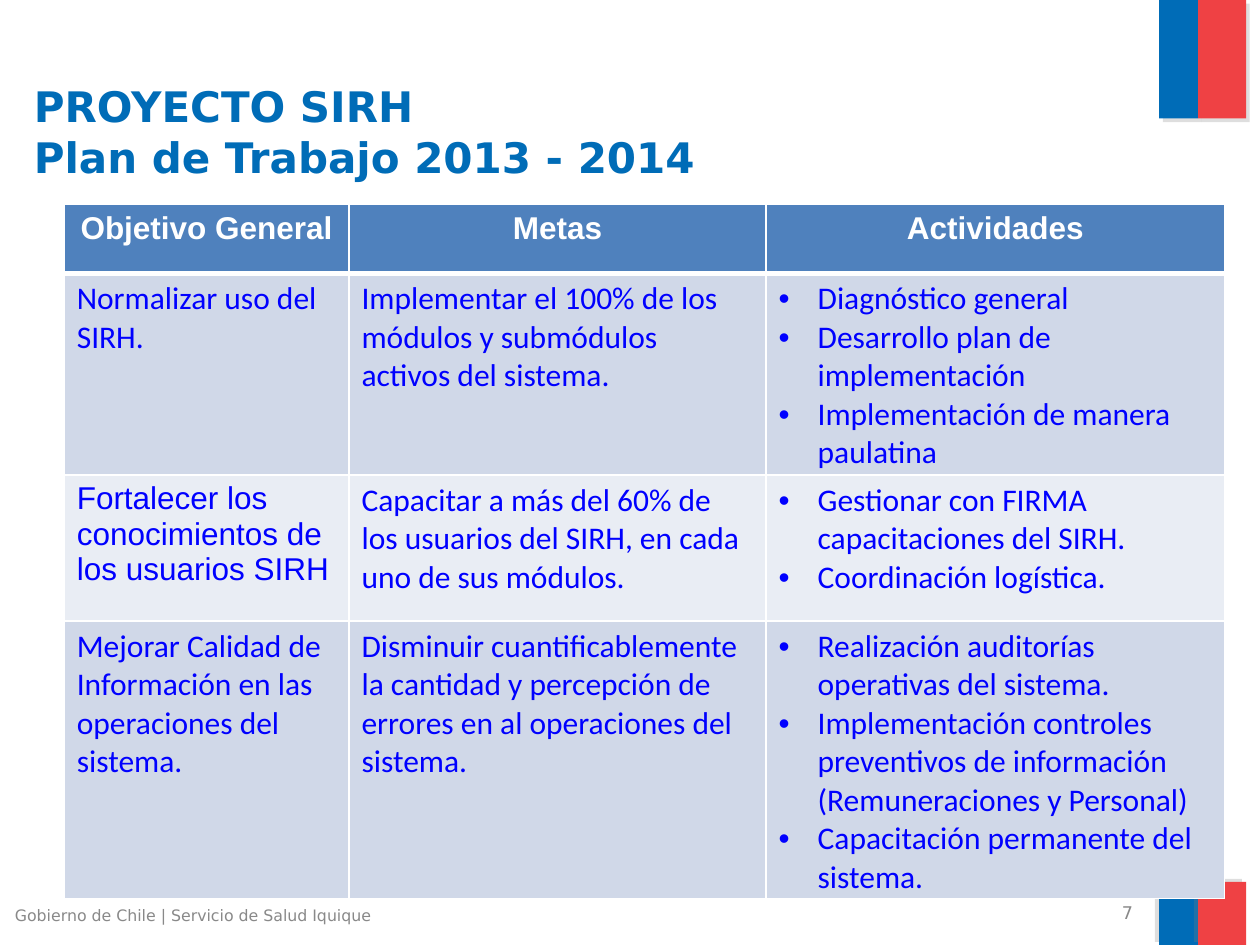
from dataclasses import dataclass

from lxml import etree
from pptx import Presentation
from pptx.dml.color import RGBColor
from pptx.enum.shapes import MSO_SHAPE
from pptx.enum.text import MSO_ANCHOR, PP_ALIGN
from pptx.oxml.ns import qn
from pptx.util import Inches, Pt

RECT = MSO_SHAPE.RECTANGLE
TOP, MIDDLE = MSO_ANCHOR.TOP, MSO_ANCHOR.MIDDLE
LEFT, CENTER, RIGHT = PP_ALIGN.LEFT, PP_ALIGN.CENTER, PP_ALIGN.RIGHT

BLUE, RED, GREY, WHITE = "006CB7", "EF4144", "898989", "FFFFFF"
HEADER_FILL, BODY_BLUE = "4F81BD", "0000FF"
BAND_FILLS = ("D0D8E8", "E9EDF4")
BULLET_INDENT = 0.31


@dataclass
class Bar:
    left: float
    top: float
    width: float
    height: float
    color: str
    shadow_angle: int


@dataclass
class Label:
    left: float
    top: float
    width: float
    height: float
    text: str
    size: float
    color: str
    bold: bool = False
    align: PP_ALIGN = LEFT
    anchor: MSO_ANCHOR = TOP
    margin_top: float = 0.05
    line_pitch: float | None = None


@dataclass
class PlanRow:
    height: float
    objective: str
    goal: str
    activities: list[str]
    objective_font: str = "Calibri"


BARS = [
    Bar(9.2, -0.01, 0.31, 0.95, BLUE, 45),
    Bar(9.51, 0, 0.38, 0.94, RED, 45),
    Bar(9.2, 7, 0.31, 0.5, BLUE, 215),
    Bar(9.51, 7, 0.38, 0.5, RED, 215),
]
LABELS = [
    Label(0.17, 0.17, 8.93, 1.25, "PROYECTO SIRH\vPlan de Trabajo 2013 - 2014", 24, BLUE,
          bold=True, margin_top=0.46, line_pitch=29.2),
    Label(6.76, 7.14, 2.33, 0.21, "7", 10, GREY, align=RIGHT, anchor=MIDDLE),
    Label(0.02, 7.14, 3.17, 0.27, "Gobierno de Chile | Servicio de Salud Iquique", 9, GREY),
]
HEADERS = ["Objetivo General", "Metas", "Actividades"]
HEADER_HEIGHT = 0.55
COL_WIDTHS = [2.26, 3.31, 3.64]
PLAN = [
    PlanRow(1.58, "Normalizar uso del SIRH.",
            "Implementar el 100% de los módulos y submódulos activos del sistema.",
            ["Diagnóstico general", "Desarrollo plan de implementación",
             "Implementación de manera paulatina"]),
    PlanRow(1.16, "Fortalecer los conocimientos de los usuarios SIRH",
            "Capacitar a más del 60% de los usuarios del SIRH, en cada uno de sus módulos.",
            ["Gestionar con FIRMA capacitaciones del SIRH.", "Coordinación logística."],
            objective_font="Arial"),
    PlanRow(1.87, "Mejorar Calidad de Información en las operaciones del sistema.",
            "Disminuir cuantificablemente la cantidad y percepción de errores en al "
            "operaciones del sistema.",
            ["Realización auditorías operativas del sistema.",
             "Implementación controles preventivos de información (Remuneraciones y Personal)",
             "Capacitación permanente del sistema."]),
]


def rgb(color: str) -> RGBColor:
    return RGBColor.from_string(color)


def sub(parent, tag: str, **attrs):
    """Append a child element with the given attributes."""
    return etree.SubElement(parent, qn(tag), {k: str(v) for k, v in attrs.items()})


def format_font(font, color: str, **values) -> None:
    font.color.rgb = rgb(color)
    for name, value in values.items():
        setattr(font, name, value)


def add_bar(slide, bar: Bar) -> None:
    s = slide.shapes.add_shape(RECT, *map(Inches, (bar.left, bar.top, bar.width, bar.height)))
    s.fill.solid()
    s.fill.fore_color.rgb = rgb(bar.color)
    s.line.fill.background()
    s.shadow.inherit = False
    effects = s._element.spPr.find(qn("a:effectLst"))
    shadow = sub(effects, "a:outerShdw", blurRad=0, dist=Pt(3), dir=bar.shadow_angle * 60000,
                 algn="ctr", rotWithShape=0)
    sub(sub(shadow, "a:srgbClr", val="808080"), "a:alpha", val=25000)


def add_label(slide, label: Label) -> None:
    box = (label.left, label.top, label.width, label.height)
    tf = slide.shapes.add_textbox(*map(Inches, box)).text_frame
    tf.word_wrap = True
    tf.vertical_anchor = label.anchor
    tf.margin_top = Inches(label.margin_top)
    tf.text = label.text
    p = tf.paragraphs[0]
    p.alignment = label.align
    if label.line_pitch:
        p.line_spacing = Pt(label.line_pitch)
    for r in p.runs:
        format_font(r.font, label.color, name="DejaVu Sans", size=Pt(label.size),
                    bold=label.bold)


def set_borders(cell, widths: dict[str, float]) -> None:
    """Draw white borders; they must precede the fill in the cell properties."""
    tc_pr = cell._tc.get_or_add_tcPr()
    for side, width in widths.items():
        line = sub(tc_pr, f"a:ln{side}", w=Pt(width))
        sub(sub(line, "a:solidFill"), "a:srgbClr", val=WHITE)


def add_bullet(p) -> None:
    p_pr = p._p.get_or_add_pPr()
    p_pr.set("marL", str(Inches(BULLET_INDENT)))
    p_pr.set("indent", str(-Inches(BULLET_INDENT)))
    sub(p_pr, "a:buFont", typeface="Arial")
    sub(p_pr, "a:buChar", char="•")


def fill_cell(cell, lines: list[str], fill: str, font: str, color: str, bold: bool = False,
              align: PP_ALIGN = LEFT, bullets: bool = False, top: float = 1,
              bottom: float = 1) -> None:
    set_borders(cell, {"L": 1, "R": 1, "T": top, "B": bottom})
    cell.fill.solid()
    cell.fill.fore_color.rgb = rgb(fill)
    tf = cell.text_frame
    tf.text = "\n".join(lines)
    for p in tf.paragraphs:
        p.alignment = align
        if bullets:
            add_bullet(p)
        format_font(p.runs[0].font, color, name=font, size=Pt(18), bold=bold)


def add_plan_table(slide) -> None:
    heights = [HEADER_HEIGHT] + [row.height for row in PLAN]
    box = (0.51, 1.62, sum(COL_WIDTHS), sum(heights))
    table = slide.shapes.add_table(len(heights), len(COL_WIDTHS), *map(Inches, box)).table
    for column, width in zip(table.columns, COL_WIDTHS):
        column.width = Inches(width)
    for table_row, height in zip(table.rows, heights):
        table_row.height = Inches(height)
    for c, header in enumerate(HEADERS):
        fill_cell(table.cell(0, c), [header], HEADER_FILL, "Arial", WHITE, bold=True,
                  align=CENTER, bottom=3)
    for i, row in enumerate(PLAN):
        fill = BAND_FILLS[i % 2]
        top = 3 if i == 0 else 1
        columns = [([row.objective], row.objective_font), ([row.goal], "Calibri"),
                   (row.activities, "Calibri")]
        for c, (lines, font) in enumerate(columns):
            fill_cell(table.cell(i + 1, c), lines, fill, font, BODY_BLUE,
                      bullets=c == 2, top=top)


def main() -> None:
    prs = Presentation()
    prs.slide_width, prs.slide_height = Inches(10), Inches(7.5)
    slide = prs.slides.add_slide(prs.slide_layouts[6])
    for bar in BARS:
        add_bar(slide, bar)
    for label in LABELS:
        add_label(slide, label)
    add_plan_table(slide)
    prs.save("out.pptx")


if __name__ == "__main__":
    main()
